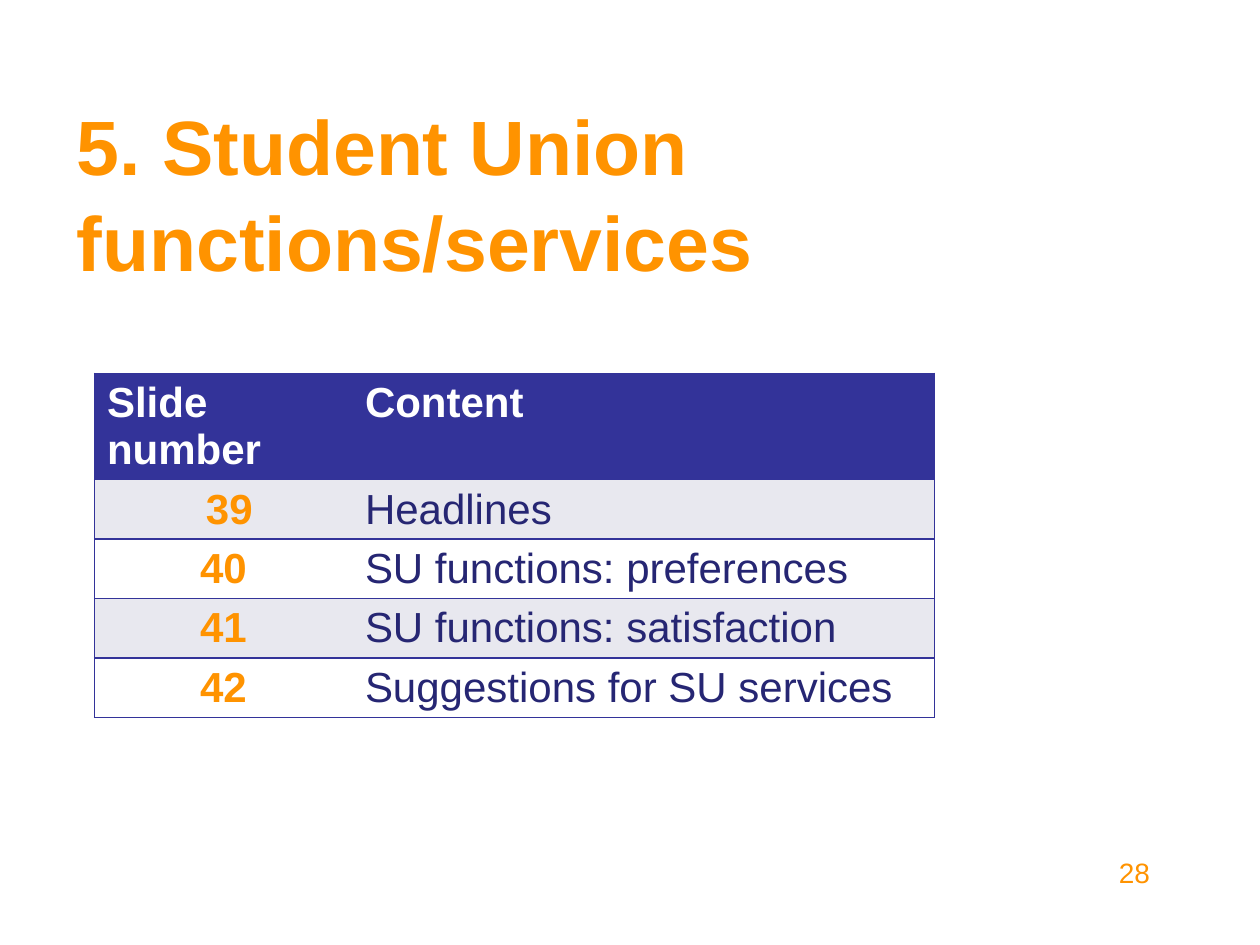
from lxml import etree
from pptx import Presentation
from pptx.dml.color import RGBColor
from pptx.enum import text
from pptx.oxml import ns
from pptx.util import Pt

COLORS = {"orange": "FF9300", "indigo": "333399", "navy": "262673",
          "white": "FFFFFF", "band": "E8E8EF"}
ROWS = [("Slide number", "Content"),
        (" 39", "Headlines"),
        ("40", "SU functions: preferences"),
        ("41", "SU functions: satisfaction"),
        ("42", "Suggestions for SU services")]


def style(para, size, color, bold=False):
    para.font.name = "Arial"
    para.font.size = Pt(size)
    para.font.bold = bold
    para.font.color.rgb = RGBColor.from_string(COLORS[color])


def add_borders(cell, sides):
    """Draw 1 pt indigo lines on the given sides and none on the others."""
    props = cell._tc.get_or_add_tcPr()
    for index, side in enumerate(("L", "R", "T", "B")):
        line = etree.Element(ns.qn(f"a:ln{side}"), w=str(Pt(1)))
        if side in sides:
            fill = etree.SubElement(line, ns.qn("a:solidFill"))
            etree.SubElement(fill, ns.qn("a:srgbClr"), val=COLORS["indigo"])
        else:
            etree.SubElement(line, ns.qn("a:noFill"))
        props.insert(index, line)


deck = Presentation()
deck.slide_width, deck.slide_height = Pt(720), Pt(540)
page = deck.slides.add_slide(deck.slide_layouts[5])

# Title
title = page.shapes.title
title.left, title.top, title.width, title.height = Pt(36.7), Pt(0), Pt(595.4), Pt(153.4)
frame = title.text_frame
frame.text = "5. Student Union functions/services"
frame.word_wrap = True
frame.auto_size = text.MSO_AUTO_SIZE.NONE
frame.vertical_anchor = text.MSO_ANCHOR.TOP
frame.margin_top, frame.margin_bottom = Pt(54), Pt(0)
para = frame.paragraphs[0]
para.alignment = text.PP_ALIGN.LEFT
para.line_spacing = 1.04
style(para, 44, "orange", bold=True)

# Table of contents
table = page.shapes.add_table(len(ROWS), 2, Pt(54), Pt(213.4), Pt(480), Pt(196)).table
table.columns[0].width, table.columns[1].width = Pt(147.4), Pt(332.6)
for r, row in enumerate(ROWS):
    table.rows[r].height = Pt(34 if r else 60)
    for c, label in enumerate(row):
        cell = table.cell(r, c)
        cell.text = label
        cell.fill.solid()
        fill = "indigo" if r == 0 else "band" if r % 2 else "white"
        cell.fill.fore_color.rgb = RGBColor.from_string(COLORS[fill])
        add_borders(cell, "RTB" if c else "LTB")
        para = cell.text_frame.paragraphs[0]
        if r == 0:
            style(para, 24, "white", bold=True)
        elif c == 0:
            para.alignment = text.PP_ALIGN.CENTER
            style(para, 24, "orange", bold=True)
        else:
            style(para, 24, "navy")

# Page number
box = page.shapes.add_textbox(Pt(632.2), Pt(485.3), Pt(61.2), Pt(26.6))
box.text_frame.word_wrap = True
para = box.text_frame.paragraphs[0]
para.text = "28"
style(para, 16, "orange")

deck.save("out.pptx")
